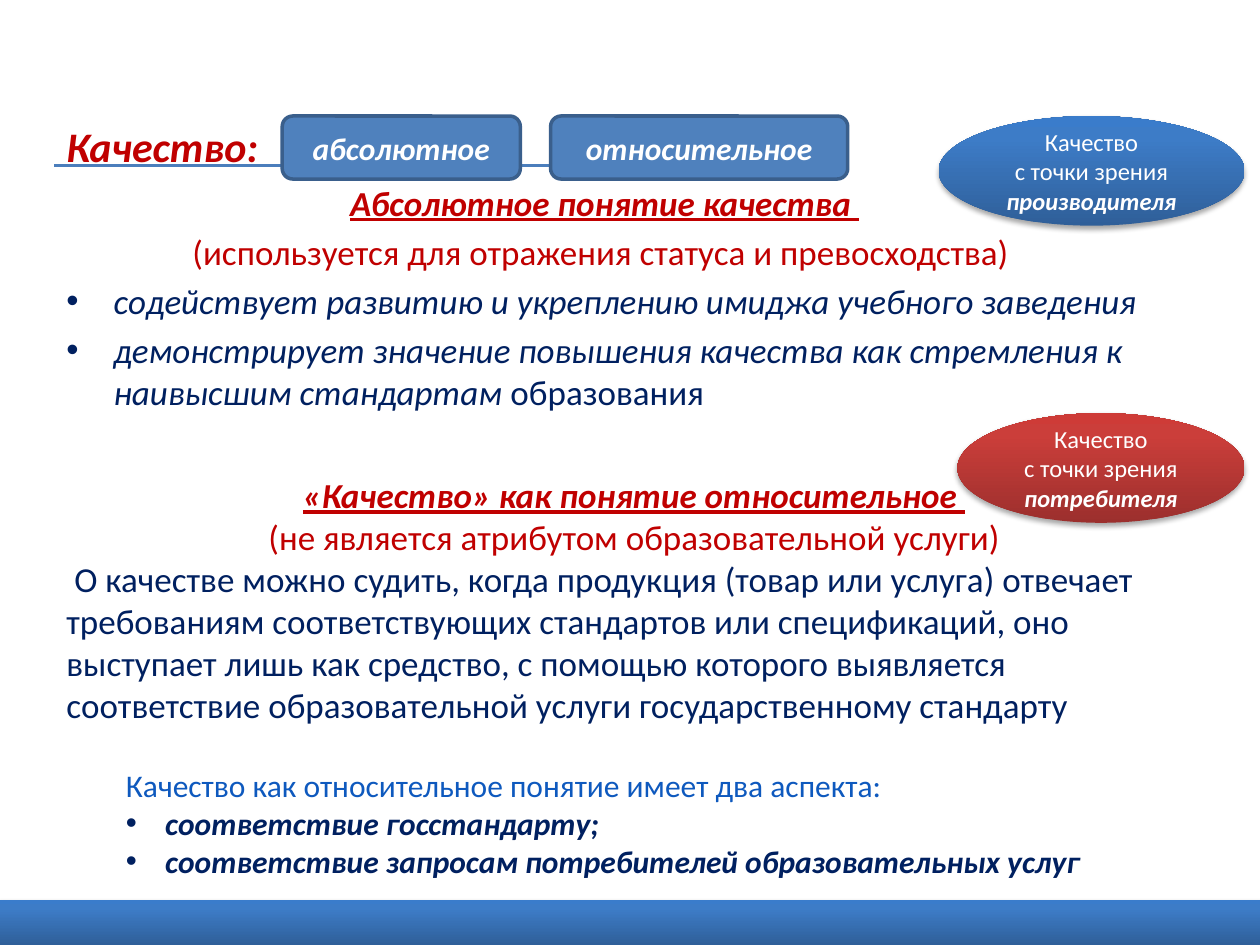
from copy import deepcopy

from lxml import etree
from pptx import Presentation
from pptx.dml.color import RGBColor
from pptx.enum.shapes import MSO_CONNECTOR, MSO_SHAPE
from pptx.enum.text import MSO_ANCHOR, PP_ALIGN
from pptx.oxml import parse_xml
from pptx.oxml.ns import nsdecls, qn
from pptx.util import Cm, Pt

ELLIPSE = MSO_SHAPE.OVAL
ROUNDED = MSO_SHAPE.ROUNDED_RECTANGLE
RECTANGLE = MSO_SHAPE.RECTANGLE
STRAIGHT = MSO_CONNECTOR.STRAIGHT
LEFT, CENTER = PP_ALIGN.LEFT, PP_ALIGN.CENTER
TOP, MIDDLE = MSO_ANCHOR.TOP, MSO_ANCHOR.MIDDLE

WHITE = RGBColor(0xFF, 0xFF, 0xFF)
RED = RGBColor(0xC0, 0x00, 0x00)
NAVY = RGBColor(0x00, 0x20, 0x60)
BRIGHT_BLUE = RGBColor(0x0E, 0x59, 0xBE)
RULE_BLUE = RGBColor(0x4B, 0x7E, 0xBC)
LABEL_BLUE = RGBColor(0x4F, 0x81, 0xBD)
LABEL_EDGE = RGBColor(0x3A, 0x5F, 0x8C)
BLUE_GRADIENT = (
    (0, RGBColor(0x2F, 0x5F, 0x99)),
    (0.8, RGBColor(0x3D, 0x7C, 0xC7)),
    (1, RGBColor(0x3A, 0x7C, 0xCB)),
)
RED_GRADIENT = (
    (0, RGBColor(0x9C, 0x2F, 0x2D)),
    (0.8, RGBColor(0xCB, 0x3E, 0x3A)),
    (1, RGBColor(0xCE, 0x3B, 0x37)),
)
SHADOW = (
    f'<a:effectLst {nsdecls("a")}>'
    f'<a:outerShdw blurRad="{Pt(3.1)}" dist="{Pt(1.8)}" dir="5400000" rotWithShape="0">'
    '<a:srgbClr val="000000"><a:alpha val="35000"/></a:srgbClr>'
    '</a:outerShdw></a:effectLst>'
)


def add_run(paragraph, text, *, font, size, color, bold=False, italic=False, underline=False):
    run = paragraph.add_run()
    run.text = text
    run.font.name = font
    run.font.size = Pt(size)
    run.font.color.rgb = color
    run.font.bold = bold
    run.font.italic = italic
    run.font.underline = underline


class SlideBuilder:
    def __init__(self, slide, font="Calibri"):
        self.slide = slide
        self.font = font

    def fill_text(self, shape, paragraphs, size, anchor=TOP):
        frame = shape.text_frame
        frame.word_wrap = True
        frame.vertical_anchor = anchor
        for index, (runs, layout) in enumerate(paragraphs):
            paragraph = frame.add_paragraph() if index else frame.paragraphs[0]
            self.lay_out(paragraph, **layout)
            for text, style in runs:
                add_run(paragraph, text, font=self.font, size=size, **style)

    def lay_out(self, paragraph, align=LEFT, before=0, hanging=0, bullet=False):
        paragraph.alignment = align
        paragraph.space_before = Pt(before)
        properties = paragraph._p.get_or_add_pPr()
        if hanging:
            properties.set("marL", str(Cm(hanging)))
            properties.set("indent", str(-Cm(hanging)))
        if bullet:
            etree.SubElement(properties, qn("a:buFont")).set("typeface", "Arial")
            etree.SubElement(properties, qn("a:buChar")).set("char", "•")

    def text(self, left, top, width, height, paragraphs, size):
        box = self.slide.shapes.add_textbox(Cm(left), Cm(top), Cm(width), Cm(height))
        self.fill_text(box, paragraphs, size)

    def rule(self, left, right, y):
        line = self.slide.shapes.add_connector(STRAIGHT, Cm(left), Cm(y), Cm(right), Cm(y))
        line.line.color.rgb = RULE_BLUE
        line.line.width = Pt(1.5)
        etree.SubElement(line._element.spPr, qn("a:effectLst"))

    def shape(self, kind, left, top, width, height):
        shape = self.slide.shapes.add_shape(kind, Cm(left), Cm(top), Cm(width), Cm(height))
        shape.shadow.inherit = False
        return shape

    def label(self, left, width, text):
        label = self.shape(ROUNDED, left, 2.34, width, 1.27)
        label.fill.solid()
        label.fill.fore_color.rgb = LABEL_BLUE
        label.line.color.rgb = LABEL_EDGE
        label.line.width = Pt(2)
        style = dict(color=WHITE, bold=True, italic=True)
        self.fill_text(label, [([(text, style)], dict(align=CENTER))], 18, MIDDLE)

    def glossy(self, kind, left, top, width, height, gradient):
        shape = self.shape(kind, left, top, width, height)
        shape.line.fill.background()
        shape.fill.gradient()
        shape.fill.gradient_angle = 90
        properties = shape._element.spPr
        stop_list = properties.find(qn("a:gradFill")).find(qn("a:gsLst"))
        stop_list.append(deepcopy(stop_list[-1]))
        for stop, (position, color) in zip(shape.fill.gradient_stops, gradient):
            stop.position = position
            stop.color.rgb = color
        properties.replace(properties.find(qn("a:effectLst")), parse_xml(SHADOW))
        return shape

    def viewpoint(self, left, top, width, gradient, whose):
        ellipse = self.glossy(ELLIPSE, left, top, width, 2.21, gradient)
        plain = dict(color=WHITE)
        strong = dict(color=WHITE, bold=True, italic=True)
        centered = dict(align=CENTER)
        paragraphs = [
            ([("Качество", plain)], centered),
            ([("с точки зрения ", plain), (whose, strong)], centered),
        ]
        self.fill_text(ellipse, paragraphs, 14, MIDDLE)


def main():
    presentation = Presentation()
    presentation.slide_width = Cm(25.4)
    presentation.slide_height = Cm(19.05)
    builder = SlideBuilder(presentation.slides.add_slide(presentation.slide_layouts[6]))

    margin = 1.09
    title = dict(color=RED, bold=True, italic=True)
    heading = dict(title, underline=True)
    heading_end = dict(heading, italic=False)
    remark = dict(color=RED)
    body = dict(color=NAVY)
    emphasis = dict(body, italic=True)
    strong = dict(emphasis, bold=True)
    centered = dict(align=CENTER)
    spaced = dict(before=4, hanging=0.95)
    spaced_center = dict(spaced, align=CENTER)
    spaced_bullet = dict(spaced, bullet=True)
    aspect = dict(hanging=0.79, bullet=True)

    builder.rule(margin, 16.69, 3.33)
    absolute = [
        ([("Абсолютное понятие качества", heading), (" ", heading_end)], spaced_center),
        ([("(используется для отражения статуса и превосходства) ", remark)], spaced_center),
        ([("содействует развитию и укреплению имиджа учебного заведения", emphasis)], spaced_bullet),
        ([("демонстрирует значение повышения качества как стремления к наивысшим стандартам ", emphasis),
          ("образования", body)], spaced_bullet),
    ]
    builder.text(margin, 3.53, 22.2, 7.01, absolute, 20)

    builder.viewpoint(18.92, 2.34, 6.17, BLUE_GRADIENT, "производителя")
    builder.viewpoint(19.3, 8.33, 5.79, RED_GRADIENT, "потребителя")

    relative = [
        ([("«Качество» как понятие относительное", heading), (" ", heading_end)], centered),
        ([("(не является атрибутом образовательной услуги)", remark)], centered),
        ([(" О качестве можно судить, когда продукция (товар или услуга) отвечает "
           "требованиям соответствующих стандартов или спецификаций, оно выступает лишь "
           "как средство, с помощью которого выявляется соответствие образовательной "
           "услуги государственному стандарту", body)], {}),
    ]
    builder.text(margin, 9.42, 23.39, 7.01, relative, 20)

    aspects = [
        ([("Качество как относительное понятие имеет два аспекта:", dict(color=BRIGHT_BLUE))], {}),
        ([("соответствие госстандарту;", strong)], aspect),
        ([("соответствие запросам потребителей образовательных услуг", strong)], aspect),
    ]
    builder.text(2.29, 15.32, 21.01, 3.33, aspects, 18)

    builder.text(margin, 2.31, 4.6, 1.3, [([("Качество:", title)], {})], 24)
    builder.label(5.69, 4.8, "абсолютное")
    builder.label(11.1, 5.99, "относительное")
    builder.glossy(RECTANGLE, 0, 18.14, 25.4, 0.91, BLUE_GRADIENT)

    presentation.save("out.pptx")


if __name__ == "__main__":
    main()
